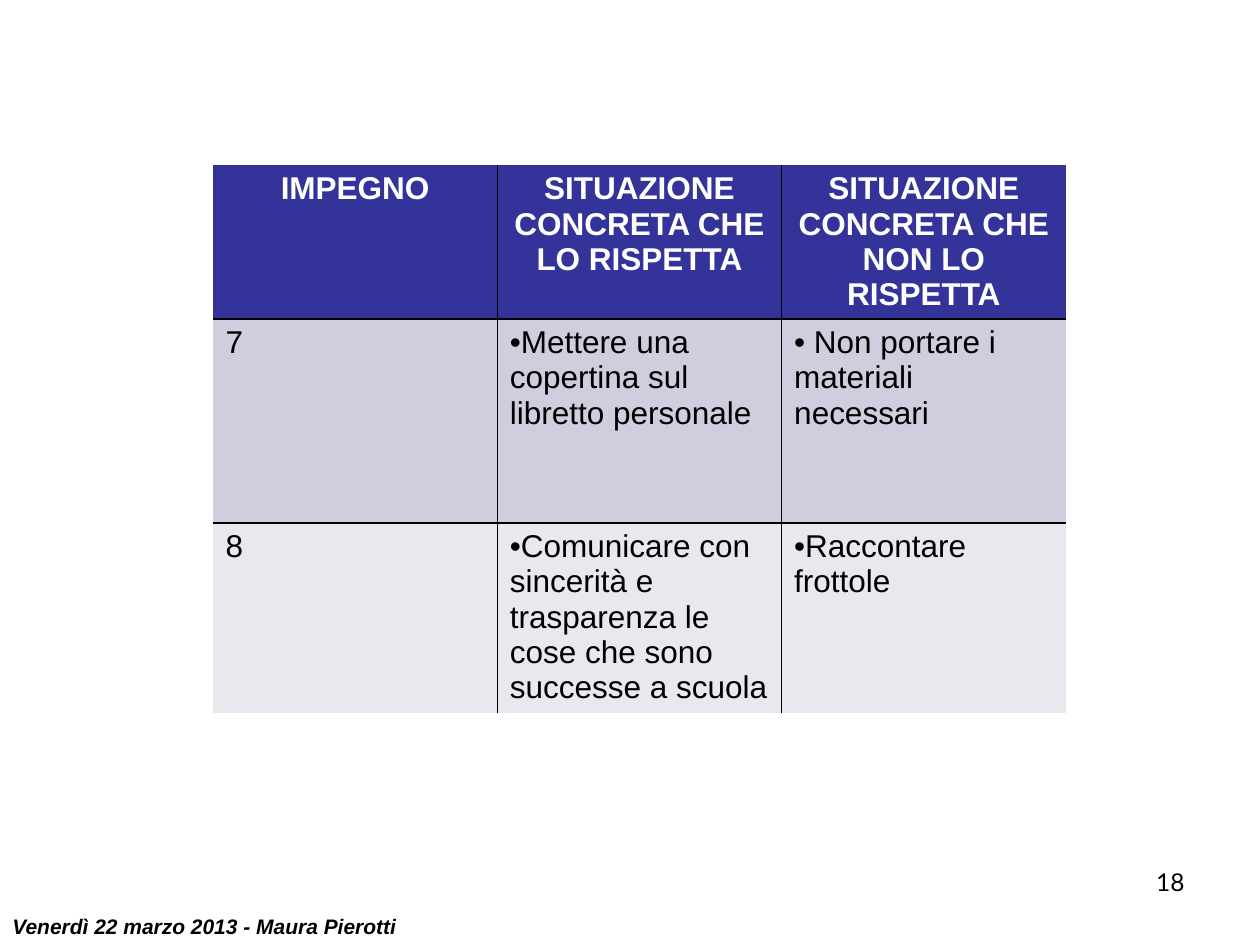
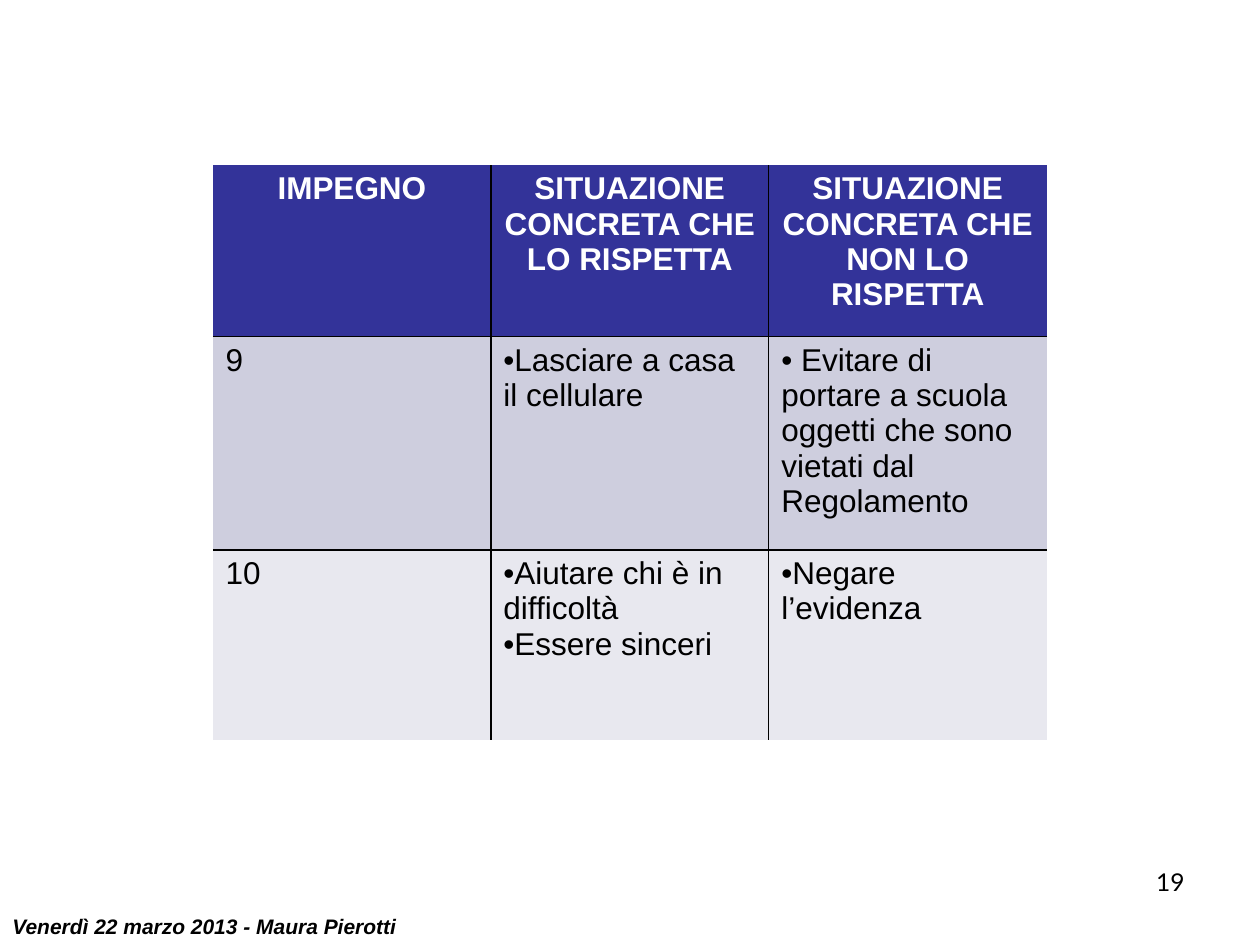
from dataclasses import dataclass

from lxml import etree
from pptx import Presentation
from pptx import util as u
from pptx.dml.color import RGBColor
from pptx.enum import text
from pptx.oxml import ns

Pt = u.Pt


@dataclass(frozen=True)
class Theme:
    header_fill: str = "333399"
    row_fills: tuple = ("CECEDE", "E8E8EF")
    ink: str = "000000"
    header_ink: str = "FFFFFF"
    body_font: str = "Arial"
    number_font: str = "Lato"
    table_size: int = 18
    number_size: int = 14
    footer_size: int = 12
    line_width: int = 1


THEME = Theme()
FOOTER = "Venerdì 22 marzo 2013 - Maura Pierotti"
HEADERS = ["IMPEGNO", "SITUAZIONE CONCRETA CHE LO RISPETTA",
           "SITUAZIONE CONCRETA CHE NON LO RISPETTA"]
TABLE_LEFT, TABLE_TOP = 121.7, 94.3

# Each row: commitment number, examples that respect it, examples that do not
SLIDES = [
    dict(number=18, column_width=162.5, row_heights=[87.4, 116.6, 108.6], rows=[
        ("7", ["Mettere una copertina sul libretto personale"],
         [" Non portare i materiali necessari"]),
        ("8", ["Comunicare con sincerità e trasparenza le cose che sono "
               "successe a scuola"],
         ["Raccontare frottole"]),
    ]),
    dict(number=19, column_width=158.8, row_heights=[97.9, 122, 108.6], rows=[
        ("9", ["Lasciare a casa il cellulare"],
         [" Evitare di portare a scuola oggetti che sono vietati dal Regolamento"]),
        ("10", ["Aiutare chi è in difficoltà", "Essere sinceri"],
         ["Negare l’evidenza"]),
    ]),
]


def write(frame, lines, size, font=THEME.body_font, color=THEME.ink, bold=False,
          italic=False, align=text.PP_ALIGN.LEFT, bullet=False):
    """Fill a text frame with one formatted paragraph per line."""
    for index, line in enumerate(lines):
        paragraph = frame.paragraphs[0] if index == 0 else frame.add_paragraph()
        paragraph.alignment = align
        if bullet:
            properties = paragraph._p.get_or_add_pPr()
            properties.set("marL", "0")
            properties.set("indent", "0")
            etree.SubElement(properties, ns.qn("a:buFont"), typeface="Arial")
            etree.SubElement(properties, ns.qn("a:buChar"), char="•")
        run = paragraph.add_run()
        run.text = line
        run.font.size = Pt(size)
        run.font.name = font
        run.font.bold = bold
        run.font.italic = italic
        run.font.color.rgb = RGBColor.from_string(color)


class Deck:
    def __init__(self, theme):
        self.theme = theme
        self.presentation = Presentation()
        self.presentation.slide_width = Pt(720)
        self.presentation.slide_height = Pt(540)
        self.slide = None

    def add_slide(self):
        self.slide = self.presentation.slides.add_slide(
            self.presentation.slide_layouts[6])

    def text_box(self, left, top, width, height, line, **style):
        shape = self.slide.shapes.add_textbox(Pt(left), Pt(top), Pt(width), Pt(height))
        shape.text_frame.word_wrap = True
        write(shape.text_frame, [line], **style)

    def page_marks(self, number):
        self.text_box(516.2, 491.8, 167.8, 37.4, str(number),
                      size=self.theme.number_size, font=self.theme.number_font,
                      align=text.PP_ALIGN.RIGHT)
        self.text_box(0, 518.4, 258.5, 21.6, FOOTER, size=self.theme.footer_size,
                      bold=True, italic=True)

    def borders(self, cell, **sides):
        """Draw the sides that are True and clear the others."""
        properties = cell._tc.get_or_add_tcPr()
        for side, drawn in sides.items():
            line = etree.SubElement(properties, ns.qn(f"a:ln{side}"),
                                    w=str(Pt(self.theme.line_width)))
            if drawn:
                fill = etree.SubElement(line, ns.qn("a:solidFill"))
                etree.SubElement(fill, ns.qn("a:srgbClr"), val=self.theme.ink)
            else:
                etree.SubElement(line, ns.qn("a:noFill"))

    def table(self, rows, column_width, row_heights):
        theme = self.theme
        columns = len(HEADERS)
        table = self.slide.shapes.add_table(
            len(row_heights), columns, Pt(TABLE_LEFT), Pt(TABLE_TOP),
            Pt(column_width * columns), Pt(sum(row_heights))).table
        table.first_row = table.horz_banding = False
        for column in table.columns:
            column.width = Pt(column_width)
        for row, height in zip(table.rows, row_heights):
            row.height = Pt(height)

        contents = [[[header] for header in HEADERS]]
        contents += [[[number], good, bad] for number, good, bad in rows]
        fills = (theme.header_fill, *theme.row_fills)
        for r, (row, fill) in enumerate(zip(contents, fills)):
            for c, lines in enumerate(row):
                cell = table.cell(r, c)
                # Only the inner grid lines show
                self.borders(cell, L=c > 0, R=c < columns - 1,
                             T=r > 0, B=r < len(contents) - 1)
                cell.fill.solid()
                cell.fill.fore_color.rgb = RGBColor.from_string(fill)
                if r == 0:
                    write(cell.text_frame, lines, theme.table_size, bold=True,
                          color=theme.header_ink, align=text.PP_ALIGN.CENTER)
                else:
                    write(cell.text_frame, lines, theme.table_size, bullet=c > 0)


def main():
    deck = Deck(THEME)
    for content in SLIDES:
        deck.add_slide()
        deck.table(content["rows"], content["column_width"], content["row_heights"])
        deck.page_marks(content["number"])
    deck.presentation.save("out.pptx")


if __name__ == "__main__":
    main()
